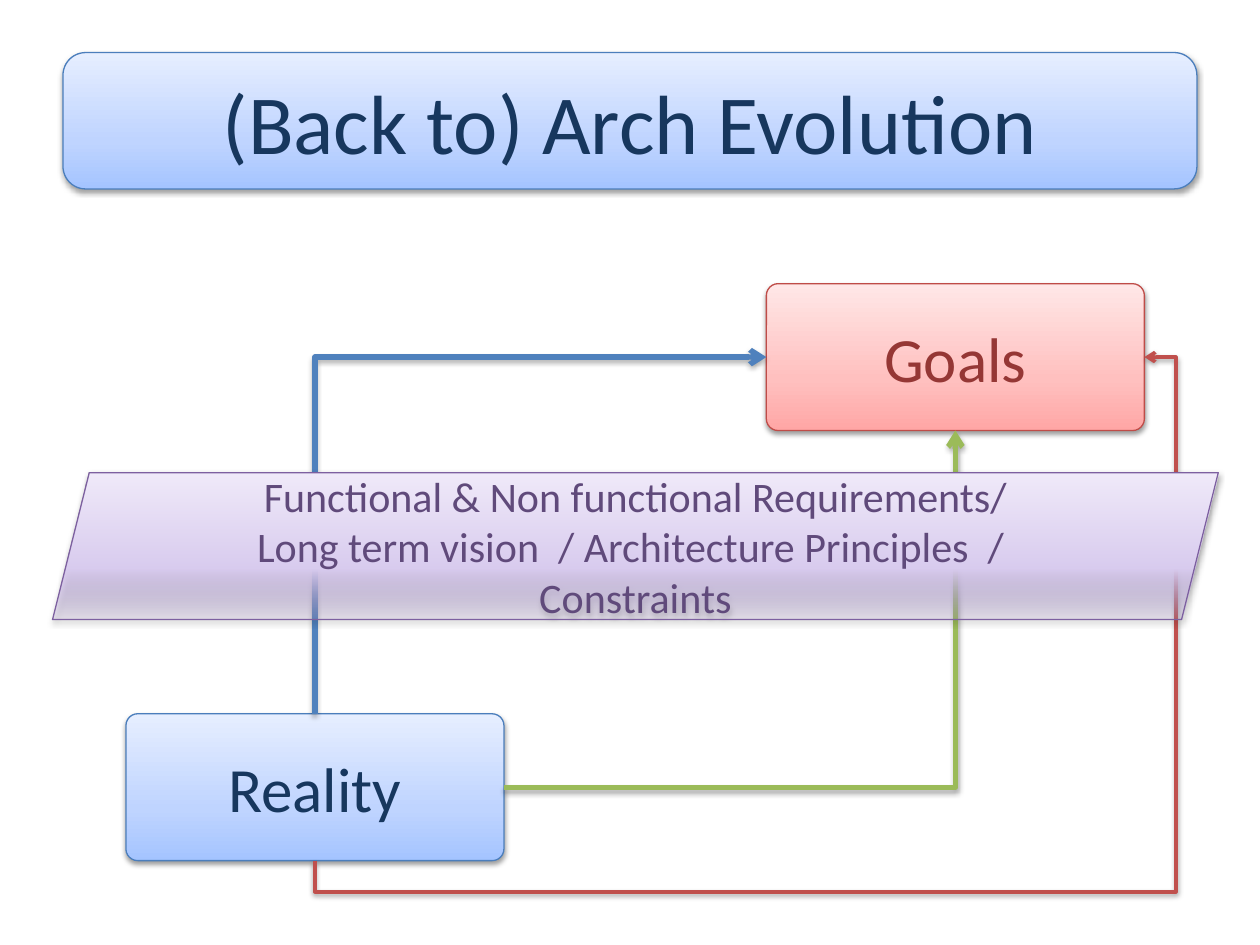
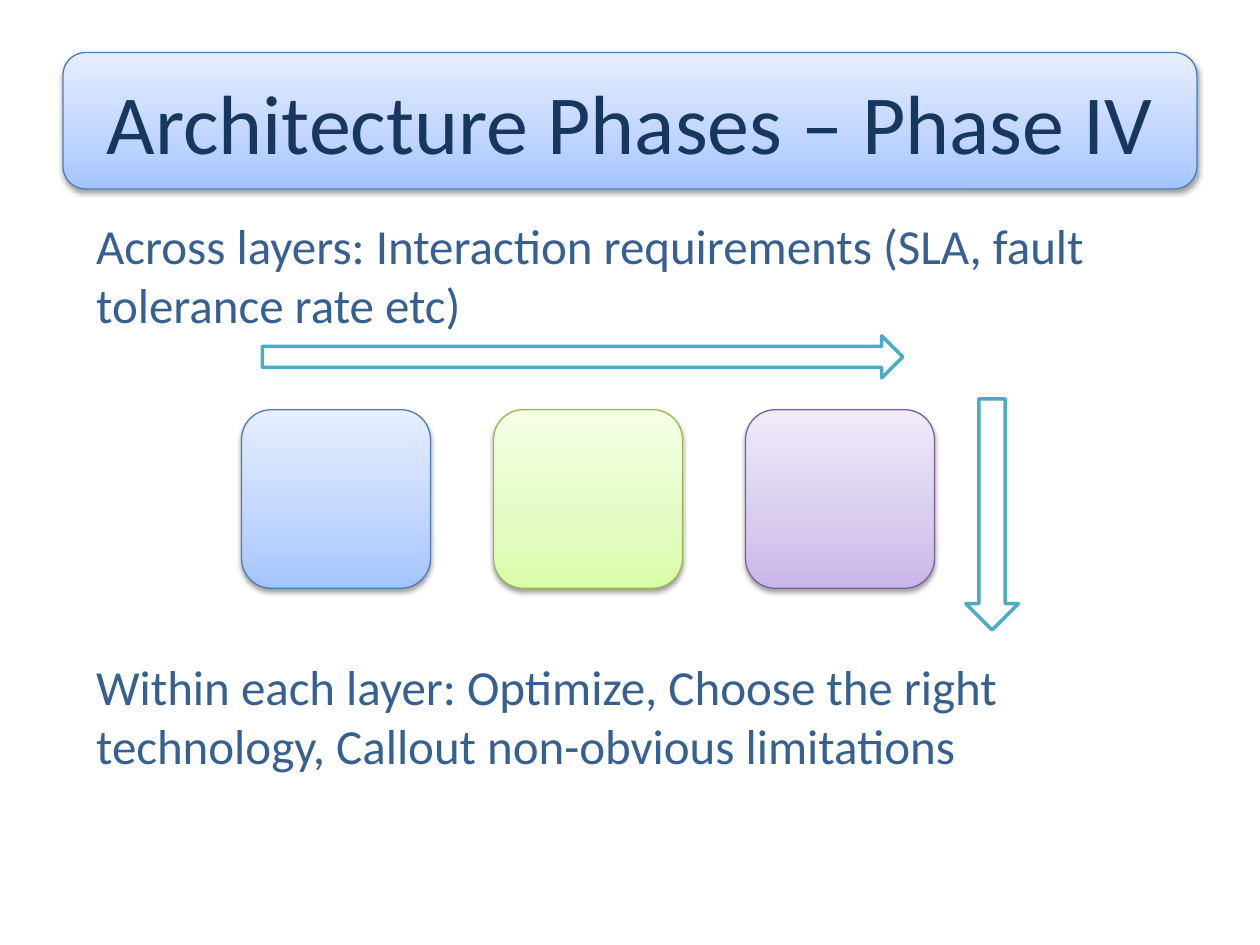
import lxml.etree
import pptx
import pptx.dml.color
import pptx.enum.shapes
import pptx.enum.text
import pptx.oxml
import pptx.oxml.ns
import pptx.util

Cm = pptx.util.Cm
Pt = pptx.util.Pt
RGBColor = pptx.dml.color.RGBColor
SHAPE = pptx.enum.shapes.MSO_SHAPE
qn = pptx.oxml.ns.qn

NAVY = RGBColor(0x17, 0x37, 0x5E)
MAROON = RGBColor(0x95, 0x37, 0x35)
PLUM = RGBColor(0x60, 0x4A, 0x7B)
STEEL = RGBColor(0x37, 0x60, 0x92)
TEAL = RGBColor(0x4B, 0xAC, 0xC6)
WHITE = RGBColor(0xFF, 0xFF, 0xFF)
BLUE_LINE = RGBColor(0x4F, 0x81, 0xBD)
GREEN_LINE = RGBColor(0x9B, 0xBB, 0x59)
RED_LINE = RGBColor(0xC0, 0x50, 0x4D)

BLUE = {
    "line": RGBColor(0x4B, 0x7E, 0xBC),
    "stops": [RGBColor(0xA4, 0xC4, 0xFF), RGBColor(0xBF, 0xD4, 0xFF), RGBColor(0xE6, 0xEE, 0xFF)],
}
RED = {
    "line": RGBColor(0xBF, 0x4C, 0x48),
    "stops": [RGBColor(0xFF, 0xA6, 0xA5), RGBColor(0xFF, 0xC0, 0xBF), RGBColor(0xFF, 0xE7, 0xE7)],
}
GREEN = {
    "line": RGBColor(0x98, 0xB9, 0x55),
    "stops": [RGBColor(0xDA, 0xFD, 0xA7), RGBColor(0xE4, 0xFC, 0xC2), RGBColor(0xF5, 0xFF, 0xE7)],
}
PURPLE = {
    "line": RGBColor(0x7D, 0x60, 0xA0),
    "stops": [RGBColor(0xC9, 0xB5, 0xE8), RGBColor(0xD8, 0xCB, 0xEE), RGBColor(0xF0, 0xEA, 0xF9)],
}
STOP_PLACES = [0, 35000, 100000]
FRAME_FORMAT = {"word_wrap": True, "vertical_anchor": pptx.enum.text.MSO_ANCHOR.MIDDLE}
NOTE_FORMAT = {"word_wrap": True, "auto_size": pptx.enum.text.MSO_AUTO_SIZE.SHAPE_TO_FIT_TEXT}


def add_shadow(properties, opacity, distance):
    effects = properties.find(qn("a:effectLst"))
    if effects is None:
        effects = lxml.etree.SubElement(properties, qn("a:effectLst"))
    shadow = lxml.etree.SubElement(
        effects, qn("a:outerShdw"), blurRad=str(Pt(3.1)), dist=str(Pt(distance)), dir="5400000", rotWithShape="0")
    color = lxml.etree.SubElement(shadow, qn("a:srgbClr"), val="000000")
    lxml.etree.SubElement(color, qn("a:alpha"), val=str(opacity * 1000))


def add_panel(page, kind, place, theme, lines=(), size=36, ink=NAVY, corner=None):
    panel = page.shapes.add_shape(kind, *[Cm(length) for length in place])
    if corner is not None:
        panel.adjustments[0] = corner
    panel.fill.gradient()
    panel.fill.gradient_angle = 90
    stop_list = panel._element.spPr.find(".//" + qn("a:gsLst"))
    for stop in list(stop_list):
        stop_list.remove(stop)
    for position, shade in zip(STOP_PLACES, theme["stops"]):
        stop = lxml.etree.SubElement(stop_list, qn("a:gs"), pos=str(position))
        lxml.etree.SubElement(stop, qn("a:srgbClr"), val=str(shade))
    panel.line.color.rgb = theme["line"]
    panel.line.width = Pt(0.75)
    panel.shadow.inherit = False
    add_shadow(panel._element.spPr, 38, 1.6)
    for name, value in FRAME_FORMAT.items():
        setattr(panel.text_frame, name, value)
    for index, line in enumerate(lines):
        para = panel.text_frame.paragraphs[0] if index == 0 else panel.text_frame.add_paragraph()
        para.alignment = pptx.enum.text.PP_ALIGN.CENTER
        span = para.add_run()
        span.text = line
        for name, value in {"name": "Calibri", "size": Pt(size)}.items():
            setattr(span.font, name, value)
        span.font.color.rgb = ink
    return panel


deck = pptx.Presentation()
deck.slide_width, deck.slide_height = Cm(25.4), Cm(19.05)

pages = []
for title in ["(Back to) Arch Evolution", "Architecture Phases – Phase IV"]:
    page = deck.slides.add_slide(deck.slide_layouts[6])
    add_panel(page, SHAPE.ROUNDED_RECTANGLE, (1.27, 1.06, 22.86, 2.75), BLUE, [title], 48)
    pages.append(page)
evolution, phases = pages

reality = add_panel(evolution, SHAPE.ROUNDED_RECTANGLE, (2.54, 14.39, 7.62, 2.96), BLUE, ["Reality"], corner=0.08)
goals = add_panel(
    evolution, SHAPE.ROUNDED_RECTANGLE, (15.45, 5.72, 7.62, 2.96), RED, ["Goals"], ink=MAROON, corner=0.08)

routes = [
    (0, 1, BLUE_LINE, 3, "bentConnector2", True, (), 35, 1.8),
    (3, 2, GREEN_LINE, 3, "bentConnector2", False, (), 35, 1.8),
    (2, 3, RED_LINE, 2, "bentConnector4", True, (-6200, 103800), 38, 1.6),
]
for start, end, color, width, bend, turned, bends, opacity, distance in routes:
    route = evolution.shapes.add_connector(pptx.enum.shapes.MSO_CONNECTOR.ELBOW, 0, 0, 0, 0)
    route.begin_connect(reality, start)
    route.end_connect(goals, end)
    properties = route._element.spPr
    geometry = properties.find(qn("a:prstGeom"))
    geometry.set("prst", bend)
    guides = geometry.find(qn("a:avLst"))
    for number, value in enumerate(bends, 1):
        lxml.etree.SubElement(guides, qn("a:gd"), name=f"adj{number}", fmla=f"val {value}")
    if turned:
        middle_x = route.left + route.width // 2
        middle_y = route.top + route.height // 2
        across, down = route.height, route.width
        route.width, route.height = across, down
        route.left, route.top = middle_x - across // 2, middle_y - down // 2
        frame = properties.find(qn("a:xfrm"))
        for name, value in {"rot": "5400000", "flipH": "1", "flipV": "1"}.items():
            frame.set(name, value)
    route.line.color.rgb = color
    route.line.width = Pt(width)
    lxml.etree.SubElement(properties.find(qn("a:ln")), qn("a:tailEnd"), type="arrow")
    add_shadow(properties, opacity, distance)

requirements = add_panel(
    evolution, SHAPE.PARALLELOGRAM, (1.06, 9.53, 23.5, 2.96), PURPLE,
    ["Functional & Non functional Requirements/", "Long term vision  / Architecture Principles  /  Constraints"],
    24, PLUM)
lower_shade = requirements._element.spPr.find(".//" + qn("a:gs")).find(qn("a:srgbClr"))
lxml.etree.SubElement(lower_shade, qn("a:alpha"), val="18000")

for index, theme in enumerate([BLUE, GREEN, PURPLE]):
    add_panel(phases, SHAPE.ROUNDED_RECTANGLE, (4.87 + index * 5.08, 8.26, 3.81, 3.6), theme)

for kind, place in [
    (SHAPE.RIGHT_ARROW, (5.29, 6.77, 12.91, 0.85)),
    (SHAPE.DOWN_ARROW, (19.47, 8.04, 1.06, 4.66)),
]:
    arrow = phases.shapes.add_shape(kind, *[Cm(length) for length in place])
    arrow.fill.solid()
    arrow.fill.fore_color.rgb = WHITE
    arrow.line.color.rgb = TEAL
    arrow.line.width = Pt(2)
    arrow.shadow.inherit = False

for top, note in [
    (4.23, "Across layers: Interaction requirements (SLA, fault tolerance rate etc)"),
    (13.12, "Within each layer: Optimize, Choose the right technology, Callout non-obvious limitations"),
]:
    box = phases.shapes.add_textbox(Cm(1.69), Cm(top), Cm(21.8), Cm(2.65))
    for name, value in NOTE_FORMAT.items():
        setattr(box.text_frame, name, value)
    span = box.text_frame.paragraphs[0].add_run()
    span.text = note
    for name, value in {"name": "Calibri", "size": Pt(28)}.items():
        setattr(span.font, name, value)
    span.font.color.rgb = STEEL

deck.save("out.pptx")
